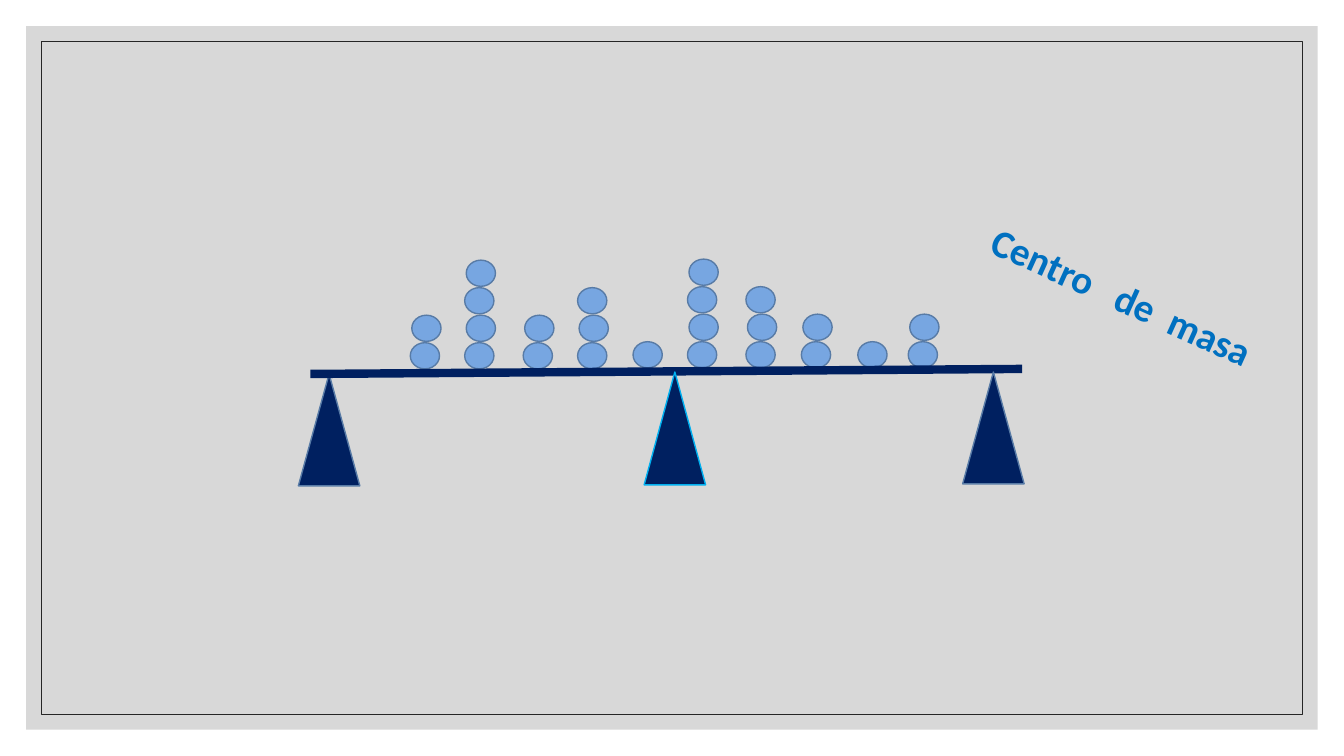
from pptx import Presentation
from pptx.dml.color import RGBColor
from pptx.enum.shapes import MSO_CONNECTOR, MSO_SHAPE
from pptx.enum.text import MSO_ANCHOR, MSO_AUTO_SIZE, PP_ALIGN
from pptx.oxml.ns import qn
from pptx.util import Inches, Pt
from lxml.etree import SubElement

theme = {
    "panel": "BFBFBF", "frame": "262626", "ball": "77A6E1", "edge": "587BA6",
    "navy": "002060", "glow": "00B0F0", "title": "0070C0",
    "font": "Calibri", "size": 28, "thin": 0.5, "line": 1, "beam": 6,
}
cell = Inches(0.1)
cols, rows = 133.33, 75


def grid(*spots):
    return [round(spot * cell) for spot in spots]


def draw(kind, box, fill=None, edge=None, width=theme["line"]):
    shape = slide.shapes.add_shape(kind, *grid(*box))
    shape.shadow.inherit = False
    for part, color in ((shape.fill, fill), (shape.line.fill, edge)):
        if color:
            part.solid()
            part.fore_color.rgb = RGBColor.from_string(theme[color])
        else:
            part.background()
    if edge:
        shape.line.width = Pt(width)
    return shape


deck = Presentation()
deck.slide_width, deck.slide_height = grid(cols, rows)
slide = deck.slides.add_slide(deck.slide_layouts[5])

edge = 2.6
panel = draw(MSO_SHAPE.RECTANGLE, (edge, edge, cols - 2 * edge, rows - 2 * edge), "panel")
tint = panel.fill._xPr.find(qn("a:solidFill"))[0]
SubElement(tint, qn("a:alpha"), val="60000")
edge = 4.1
draw(MSO_SHAPE.RECTANGLE, (edge, edge, cols - 2 * edge, rows - 2 * edge),
     edge="frame", width=theme["thin"])

stacks = [
    (40.7, 2), (46.1, 4), (51.9, 2), (57.3, 3), (62.8, 1),
    (68.2, 4), (74, 3), (79.5, 2), (85.1, 1), (90.1, 2),
]
step, shift = 2.73, 0.15
for place, (left, count) in enumerate(stacks):
    base = 34 if place < 4 else 33.9
    for level in range(count):
        spot = (left + level % 2 * shift, base - level * step, 2.9, 2.6)
        draw(MSO_SHAPE.OVAL, spot, "ball", "edge")

draw(MSO_SHAPE.ISOSCELES_TRIANGLE, (29.6, 37.1, 6.1, 11.1), "navy", "edge")
beam = slide.shapes.add_connector(MSO_CONNECTOR.STRAIGHT, *grid(30.8, 37.1, 101.4, 36.6))
beam.line.color.rgb = RGBColor.from_string(theme["navy"])
beam.line.width = Pt(theme["beam"])
SubElement(beam._element.spPr, qn("a:effectLst"))
for left, tall, tone in ((95.5, 11.1, "edge"), (63.9, 11.2, "glow")):
    draw(MSO_SHAPE.ISOSCELES_TRIANGLE, (left, 36.9, 6.1, tall), "navy", tone)

title = slide.shapes.title
title.text = "Centro   de  masa"
line = title.text_frame.paragraphs[0]
left, top, width, height = grid(92.4, 26.5, 37.8, 5.7)
formats = [
    (title, {"left": left, "top": top, "width": width, "height": height, "rotation": 24.4}),
    (title.text_frame, {"word_wrap": True, "vertical_anchor": MSO_ANCHOR.MIDDLE,
                        "auto_size": MSO_AUTO_SIZE.SHAPE_TO_FIT_TEXT}),
    (line, {"alignment": PP_ALIGN.CENTER}),
    (line.runs[0].font, {"name": theme["font"], "size": Pt(theme["size"]), "bold": True}),
    (line.runs[0].font.color, {"rgb": RGBColor.from_string(theme["title"])}),
]
for item, values in formats:
    for name, value in values.items():
        setattr(item, name, value)
slide.shapes._spTree.append(title._element)

deck.save("out.pptx")
